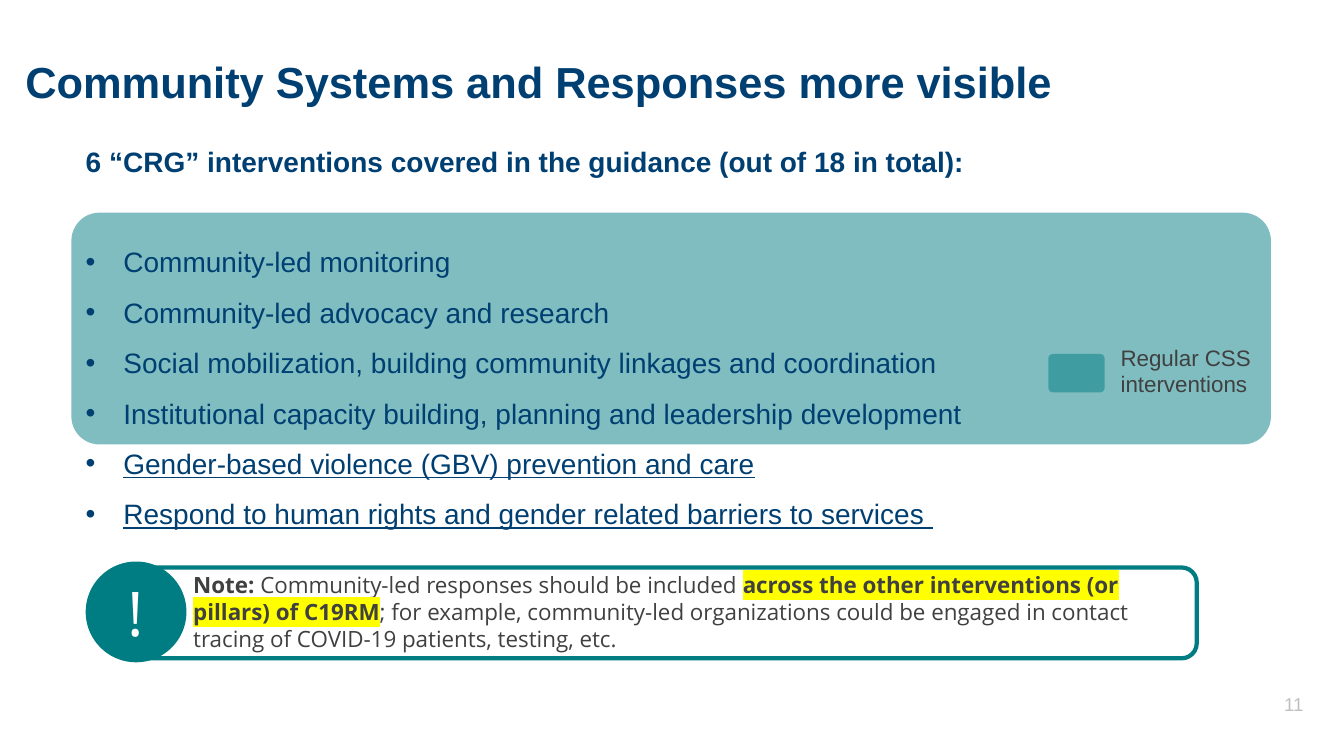
from dataclasses import dataclass

from lxml import etree
from pptx import Presentation
from pptx.dml.color import RGBColor
from pptx.enum.shapes import MSO_SHAPE
from pptx.enum.text import MSO_ANCHOR, PP_ALIGN
from pptx.oxml.ns import qn
from pptx.util import Cm, Pt

ROUND, OVAL = MSO_SHAPE.ROUNDED_RECTANGLE, MSO_SHAPE.OVAL
TOP, MIDDLE, BOTTOM = MSO_ANCHOR.TOP, MSO_ANCHOR.MIDDLE, MSO_ANCHOR.BOTTOM
CENTER, RIGHT = PP_ALIGN.CENTER, PP_ALIGN.RIGHT


@dataclass(frozen=True)
class Theme:
    """Colours, fonts and type sizes of the slide."""
    navy: str = "003F72"
    teal: str = "007D82"
    dark: str = "404040"
    pale: str = "BFBFBF"
    white: str = "FFFFFF"
    mark: str = "FFFF00"
    sans: str = "Arial"
    open: str = "Open Sans"
    title: float = 31
    body: float = 20
    note: float = 16
    icon: float = 44
    page: float = 13.3
    lead: float = 1.2


THEME = Theme()
ITEMS = [
    ("Community-led monitoring", False),
    ("Community-led advocacy and research", False),
    ("Social mobilization, building community linkages and coordination", False),
    ("Institutional capacity building, planning and leadership development", False),
    ("Gender-based violence (GBV) prevention and care", True),
    ("Respond to human rights and gender related barriers to services ", True),
]
NOTE = [
    ("Note: ", True, None),
    ("Community-led responses should be included ", False, None),
    ("across the other interventions (or pillars) of C19RM", True, THEME.mark),
    ("; for example, community-led organizations could be engaged in contact "
     "tracing of COVID-19 patients, testing, etc.", False, None),
]


def add_run(para, text, size, color, font=THEME.sans, bold=False, under=False, mark=None):
    """Add one styled run to a paragraph."""
    run = para.add_run()
    run.text = text
    run.font.size = Pt(size)
    run.font.name = font
    run.font.bold = bold
    run.font.underline = under
    run.font.color.rgb = RGBColor.from_string(color)
    if mark:
        light = etree.Element(qn("a:highlight"))
        etree.SubElement(light, qn("a:srgbClr"), val=mark)
        run.font._element.find(qn("a:solidFill")).addnext(light)


def set_frame(frame, pad=(0, 0), anchor=TOP):
    """Set wrapping, insets and anchor, and return the first paragraph."""
    frame.word_wrap = True
    frame.margin_left = frame.margin_right = Cm(pad[0])
    frame.margin_top = frame.margin_bottom = Cm(pad[1])
    frame.vertical_anchor = anchor
    return frame.paragraphs[0]


def add_text(slide, box, pad=(0, 0), anchor=TOP):
    """Add a text box and return its frame and first paragraph."""
    frame = slide.shapes.add_textbox(*map(Cm, box)).text_frame
    return frame, set_frame(frame, pad, anchor)


def add_form(slide, kind, box, color, alpha=None, edge=None, adj=None):
    """Add a flat shape with an optional outline and opacity."""
    form = slide.shapes.add_shape(kind, *map(Cm, box))
    form.shadow.inherit = False
    form.fill.solid()
    form.fill.fore_color.rgb = RGBColor.from_string(color)
    if alpha:
        tint = form._element.spPr.find(qn("a:solidFill"))[0]
        etree.SubElement(tint, qn("a:alpha"), val=str(alpha * 1000))
    if edge:
        form.line.color.rgb = RGBColor.from_string(edge)
        form.line.width = Pt(3)
    else:
        form.line.fill.background()
    if adj:
        form.adjustments[0] = adj
    return form


def add_title(slide, box):
    """Place the slide title."""
    para = add_text(slide, box)[1]
    para.line_spacing = 0.9
    add_run(para, "Community Systems and Responses more visible",
            THEME.title, THEME.navy, bold=True)


def add_panel(slide, box):
    """Place the tinted panel behind the regular interventions."""
    add_form(slide, ROUND, box, THEME.teal, alpha=50, adj=0.121)


def add_list(slide, box):
    """Place the lead line and the bulleted interventions."""
    frame, para = add_text(slide, box)
    lead = Pt(THEME.body * THEME.lead)
    para.line_spacing = lead
    add_run(para, "6 “CRG” interventions covered in the guidance (out of 18 in total):",
            THEME.body, THEME.navy, bold=True)
    for i, (text, under) in enumerate(ITEMS):
        para = frame.add_paragraph()
        para.line_spacing = lead
        para.space_before = Pt(12 if i else 48)
        props = para._p.get_or_add_pPr()
        props.set("marL", str(Cm(0.95)))
        props.set("indent", str(-Cm(0.95)))
        etree.SubElement(props, qn("a:buFont"), typeface=THEME.sans)
        etree.SubElement(props, qn("a:buChar"), char="•")
        add_run(para, text, THEME.body, THEME.navy, under=under)


def add_key(slide, box):
    """Place the legend swatch and its label."""
    x, y, w, h = box
    add_form(slide, ROUND, (x, y + 0.39, 1.42, 0.97), THEME.teal, alpha=50, adj=0.121)
    para = add_text(slide, (x + 1.57, y, w - 1.57, h), (0.25, 0.13))[1]
    para.line_spacing = Pt(THEME.note * THEME.lead)
    add_run(para, "Regular CSS interventions", THEME.note, THEME.dark)


def add_note(slide, box):
    """Place the framed note with its round icon."""
    x, y, w, h = box
    add_form(slide, ROUND, (x + 1.22, y + 0.15, w - 1.22, 2.29), THEME.white, edge=THEME.teal)
    disc = add_form(slide, OVAL, (x, y, h, h), THEME.teal)
    para = set_frame(disc.text_frame, anchor=MIDDLE)
    para.alignment = CENTER
    add_run(para, "!", THEME.icon, THEME.white, THEME.open)
    para = add_text(slide, (x + 2.46, y + 0.12, w - 2.4, 2.31), (0.25, 0.13))[1]
    para.line_spacing = Pt(THEME.note * THEME.lead)
    for text, bold, mark in NOTE:
        add_run(para, text, THEME.note, THEME.dark, THEME.open, bold, mark=mark)


def add_page(slide, box):
    """Place the page number."""
    para = add_text(slide, box, anchor=BOTTOM)[1]
    para.alignment = RIGHT
    add_run(para, "11", THEME.page, THEME.pale)


def main():
    """Build and save the slide."""
    deck = Presentation()
    deck.slide_width, deck.slide_height = Cm(33.87), Cm(19.05)
    slide = deck.slides.add_slide(deck.slide_layouts[6])
    add_panel(slide, (1.8, 5.36, 30.23, 5.84))
    add_title(slide, (0.64, 1.55, 29.87, 3.18))
    add_list(slide, (2.16, 3.63, 31.06, 13.39))
    add_page(slide, (31.55, 17.22, 1.3, 0.81))
    add_key(slide, (26.42, 8.53, 7.13, 1.63))
    add_note(slide, (2.16, 14.15, 28, 2.54))
    deck.save("out.pptx")


if __name__ == "__main__":
    main()
